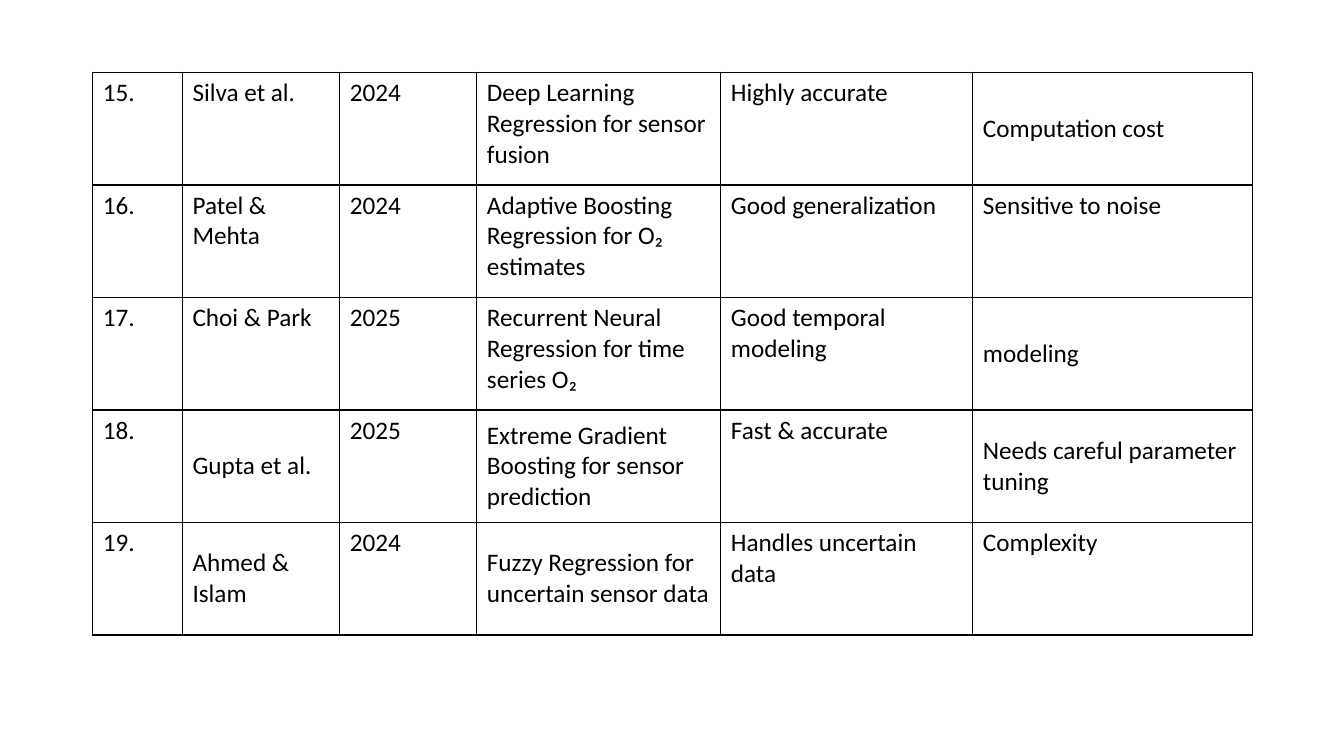
from dataclasses import dataclass

from lxml.etree import SubElement
from pptx import Presentation
from pptx.dml.color import RGBColor
from pptx.enum.text import MSO_ANCHOR
from pptx.oxml.ns import qn
from pptx.table import _Cell
from pptx.util import Inches, Pt


@dataclass(frozen=True)
class Theme:
    font: str = "Calibri"
    size: float = 18
    ink: str = "000000"
    border: float = 1


@dataclass(frozen=True)
class Study:
    number: str
    authors: str
    year: str
    method: str
    strength: str
    weakness: str
    centred: tuple[str, ...] = ()  # fields anchored to the middle of the row


THEME = Theme()
FIELDS = ("number", "authors", "year", "method", "strength", "weakness")
COL_WIDTHS = (0.89, 1.56, 1.36, 2.42, 2.5, 2.77)
LEFT, TOP, HEIGHT = 0.92, 0.72, 5.58

STUDIES = (
    Study("15.", "Silva et al.", "2024", "Deep Learning Regression for sensor fusion",
          "Highly accurate", "Computation cost", ("weakness",)),
    Study("16.", "Patel & Mehta", "2024", "Adaptive Boosting Regression for O₂ estimates",
          "Good generalization", "Sensitive to noise"),
    Study("17.", "Choi & Park", "2025", "Recurrent Neural Regression for time series O₂",
          "Good temporal modeling", "modeling", ("weakness",)),
    Study("18.", "Gupta et al.", "2025", "Extreme Gradient Boosting for sensor prediction",
          "Fast & accurate", "Needs careful parameter tuning",
          ("authors", "method", "weakness")),
    Study("19.", "Ahmed & Islam", "2024", "Fuzzy Regression for uncertain sensor data",
          "Handles uncertain data", "Complexity", ("authors", "method")),
)


def add_borders(cell: _Cell) -> None:
    tc_pr = cell._tc.get_or_add_tcPr()
    for side in ("lnL", "lnR", "lnT", "lnB"):
        ln = SubElement(tc_pr, qn(f"a:{side}"), w=str(Pt(THEME.border)))
        fill = SubElement(ln, qn("a:solidFill"))
        SubElement(fill, qn("a:srgbClr"), val=THEME.ink)


def fill_cell(cell: _Cell, text: str, centred: bool) -> None:
    add_borders(cell)
    cell.fill.background()
    cell.vertical_anchor = MSO_ANCHOR.MIDDLE if centred else MSO_ANCHOR.TOP
    p = cell.text_frame.paragraphs[0]
    r = p.add_run()
    r.text = text
    formats = {"name": THEME.font, "size": Pt(THEME.size), "bold": False}
    for name, value in formats.items():
        setattr(r.font, name, value)
    r.font.color.rgb = RGBColor.from_string(THEME.ink)


def main() -> None:
    prs = Presentation()
    prs.slide_width, prs.slide_height = Inches(13.33), Inches(7.5)
    s = prs.slides.add_slide(prs.slide_layouts[6])

    # Literature table
    table = s.shapes.add_table(
        len(STUDIES), len(FIELDS), Inches(LEFT), Inches(TOP),
        Inches(sum(COL_WIDTHS)), Inches(HEIGHT)).table
    table.first_row = table.horz_banding = False
    for column, width in zip(table.columns, COL_WIDTHS):
        column.width = Inches(width)

    # One row per study
    for row, study in zip(table.rows, STUDIES):
        for cell, field in zip(row.cells, FIELDS):
            fill_cell(cell, getattr(study, field), field in study.centred)

    prs.save("out.pptx")


if __name__ == "__main__":
    main()
